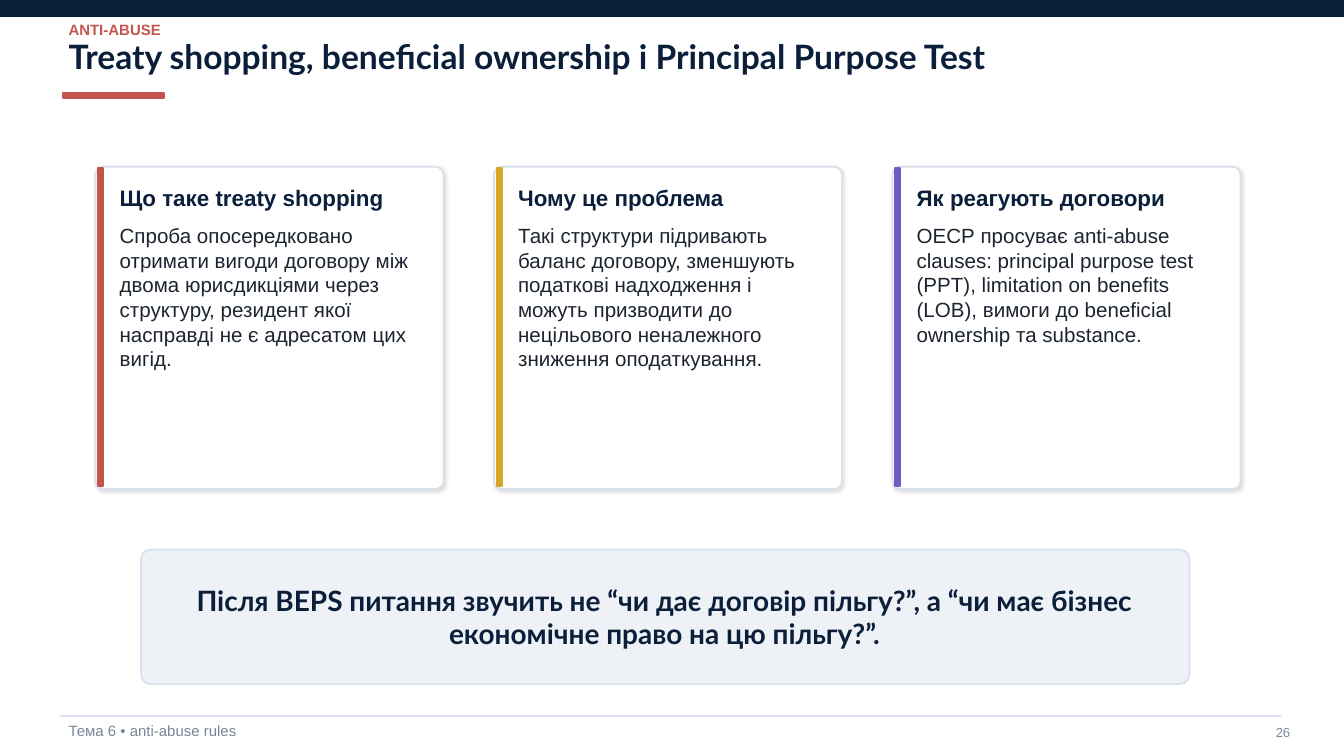
from dataclasses import dataclass

from lxml.etree import SubElement
from pptx import Presentation
from pptx.dml.color import RGBColor
from pptx.enum.shapes import MSO_CONNECTOR, MSO_SHAPE
from pptx.enum.text import MSO_ANCHOR, PP_ALIGN
from pptx.oxml.ns import qn
from pptx.util import Inches, Pt


@dataclass(frozen=True)
class Theme:
    navy: str = "0B1F3A"
    red: str = "C4554D"
    gold: str = "D4A62A"
    violet: str = "6F5CC2"
    ink: str = "1C2430"
    muted: str = "7A8699"
    white: str = "FFFFFF"
    panel: str = "EEF2F7"
    border: str = "D9E1EC"
    rule: str = "DDE3ED"
    heading_font: str = "Lato"
    body_font: str = "Arial"
    title: int = 18
    quote: int = 15
    card_title: int = 12
    body: int = 11
    small: int = 8
    number: int = 7


T = Theme()
prs = Presentation()
prs.slide_width, prs.slide_height = Inches(10), Inches(10 * 9 / 16)
s = prs.slides.add_slide(prs.slide_layouts[6])


def add_text(text, x, y, w, h, size=T.body, color=T.ink, font=T.body_font,
             bold=False, align=PP_ALIGN.LEFT):
    tf = s.shapes.add_textbox(Inches(x), Inches(y), Inches(w), Inches(h)).text_frame
    tf.word_wrap = True
    tf.vertical_anchor = MSO_ANCHOR.TOP
    tf.margin_left = tf.margin_right = Inches(0.04)
    tf.margin_top = tf.margin_bottom = Inches(0.03)
    p = tf.paragraphs[0]
    p.alignment = align
    r = p.add_run()
    r.text = text
    r.font.name, r.font.size, r.font.bold = font, Pt(size), bold
    r.font.color.rgb = RGBColor.from_string(color)


def add_box(x, y, w, h, fill, line=None, radius=None):
    kind = MSO_SHAPE.RECTANGLE if radius is None else MSO_SHAPE.ROUNDED_RECTANGLE
    sp = s.shapes.add_shape(kind, Inches(x), Inches(y), Inches(w), Inches(h))
    if radius is not None:
        sp.adjustments[0] = radius / min(w, h)
    sp.shadow.inherit = False
    sp.fill.solid()
    sp.fill.fore_color.rgb = RGBColor.from_string(fill)
    sp.line.color.rgb = RGBColor.from_string(line or fill)
    sp.line.width = Pt(1)
    return sp


# Top band and footer rule
add_box(0, 0, 10, 0.12, T.navy)
rule = s.shapes.add_connector(MSO_CONNECTOR.STRAIGHT, Inches(0.45), Inches(5.33),
                              Inches(9.53), Inches(5.33))
rule.line.color.rgb = RGBColor.from_string(T.rule)
rule.line.width = Pt(1)
SubElement(rule._element.spPr, qn("a:effectLst"))

# Heading
add_text("Treaty shopping, beneficial ownership і Principal Purpose Test",
         0.47, 0.24, 8.4, 0.54, size=T.title, color=T.navy, font=T.heading_font, bold=True)
add_text("ANTI-ABUSE", 0.47, 0.12, 3, 0.07, size=T.small, color=T.red, bold=True)
add_box(0.47, 0.69, 0.75, 0.04, T.red)

# Three cards, evenly spread between the left and right edges
cards = [
    (T.red, "Що таке treaty shopping",
     "Спроба опосередковано отримати вигоди договору між двома юрисдикціями через "
     "структуру, резидент якої насправді не є адресатом цих вигід."),
    (T.gold, "Чому це проблема",
     "Такі структури підривають баланс договору, зменшують податкові надходження і "
     "можуть призводити до нецільового неналежного зниження оподаткування."),
    (T.violet, "Як реагують договори",
     "ОЕСР просуває anti-abuse clauses: principal purpose test (PPT), limitation on "
     "benefits (LOB), вимоги до beneficial ownership та substance."),
]
left, right, card_w = 0.71, 9.23, 2.59
pitch = (right - left - card_w) / (len(cards) - 1)
for i, (accent, title, body) in enumerate(cards):
    x = left + i * pitch
    card = add_box(x, 1.24, card_w, 2.4, T.white, line=T.border, radius=0.06)
    effects = card._element.spPr.find(qn("a:effectLst"))
    shadow = SubElement(effects, qn("a:outerShdw"), blurRad=str(Pt(2)), dist=str(Pt(1)),
                        dir="2700000", algn="bl", rotWithShape="0")
    shade = SubElement(shadow, qn("a:srgbClr"), val="000000")
    SubElement(shade, qn("a:alpha"), val="12000")
    add_box(x + 0.02, 1.25, 0.04, 2.37, accent)
    add_text(title, x + 0.14, 1.34, 2.38, 0.26, size=T.card_title, color=T.navy, bold=True)
    add_text(body, x + 0.14, 1.63, 2.38, 1.92)

# Key message
add_box(1.05, 4.09, 7.8, 1, T.panel, line=T.border, radius=0.07)
add_text("Після BEPS питання звучить не “чи дає договір пільгу?”, а “чи має бізнес "
         "економічне право на цю пільгу?”.", 1.27, 4.31, 7.35, 0.18, size=T.quote,
         color=T.navy, font=T.heading_font, bold=True, align=PP_ALIGN.CENTER)

# Footer
add_text("Тема 6 • anti-abuse rules", 0.47, 5.34, 3.23, 0.12, size=T.small, color=T.muted)
add_text("26", 9.34, 5.36, 0.3, 0.15, size=T.number, color=T.muted, align=PP_ALIGN.RIGHT)

prs.save("out.pptx")
